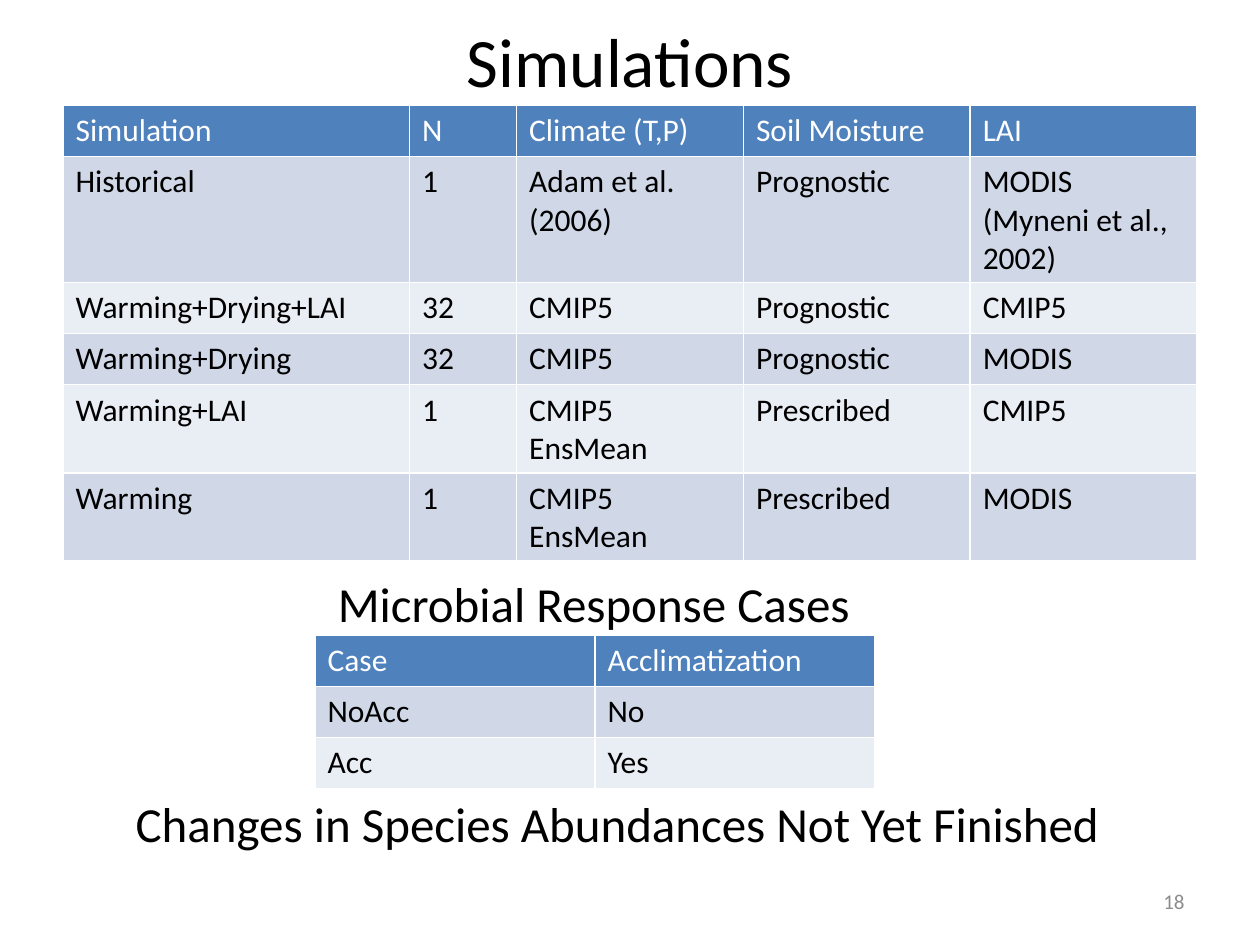
import pptx
import pptx.dml.color
import pptx.enum.text
import pptx.util

Pt = pptx.util.Pt
ALIGN = pptx.enum.text.PP_ALIGN
ANCHOR = pptx.enum.text.MSO_ANCHOR

FONT = "Calibri"
COLORS = {
    "ink": "000000",
    "header_ink": "FFFFFF",
    "muted": "8C8C8C",
    "header": "4F81BD",
    "odd_row": "D0D8E8",
    "even_row": "E9EDF4",
}
ROW_HEIGHT = 29.2

SIMULATIONS = [
    ("Simulation", "N", "Climate (T,P)", "Soil Moisture", "LAI"),
    ("Historical", "1", "Adam et al. (2006)", "Prognostic", "MODIS (Myneni et al., 2002)"),
    ("Warming+Drying+LAI", "32", "CMIP5", "Prognostic", "CMIP5"),
    ("Warming+Drying", "32", "CMIP5", "Prognostic", "MODIS"),
    ("Warming+LAI", "1", "CMIP5 EnsMean", "Prescribed", "CMIP5"),
    ("Warming", "1", "CMIP5 EnsMean", "Prescribed", "MODIS"),
]
RESPONSE_CASES = [
    ("Case", "Acclimatization"),
    ("NoAcc", "No"),
    ("Acc", "Yes"),
]


def rgb(name):
    return pptx.dml.color.RGBColor.from_string(COLORS[name])


def write(frame, text, size=18, color="ink", align=ALIGN.LEFT):
    paragraph = frame.paragraphs[0]
    paragraph.alignment = align
    run = paragraph.add_run()
    run.text = text
    run.font.name = FONT
    run.font.size = Pt(size)
    run.font.bold = False
    run.font.color.rgb = rgb(color)


def add_label(slide, box, text, anchor=ANCHOR.TOP, **text_format):
    frame = slide.shapes.add_textbox(*map(Pt, box)).text_frame
    frame.word_wrap = True
    frame.vertical_anchor = anchor
    write(frame, text, **text_format)


def add_banded_table(slide, left, top, column_widths, rows):
    table = slide.shapes.add_table(
        len(rows), len(column_widths), Pt(left), Pt(top),
        Pt(sum(column_widths)), Pt(ROW_HEIGHT * len(rows))).table
    for column, width in zip(table.columns, column_widths):
        column.width = Pt(width)
    for r, texts in enumerate(rows):
        table.rows[r].height = Pt(ROW_HEIGHT)
        band = "header" if r == 0 else "odd_row" if r % 2 else "even_row"
        for c, text in enumerate(texts):
            cell = table.cell(r, c)
            cell.fill.solid()
            cell.fill.fore_color.rgb = rgb(band)
            write(cell.text_frame, text, color="ink" if r else "header_ink")


def add_simulations(slide, left, top, width):
    add_label(slide, (left, top, width, 56), "Simulations",
              anchor=ANCHOR.MIDDLE, size=39.6, align=ALIGN.CENTER)
    add_banded_table(slide, left, top + 54.2, [198, 61.2] + [129.6] * 3, SIMULATIONS)


def add_response_cases(slide, left, top, width):
    add_label(slide, (left + 6, top, 351, 41), "Microbial Response Cases", size=28)
    add_banded_table(slide, left, top + 39, [width / 2] * 2, RESPONSE_CASES)


def add_closing(slide, left, top, width):
    add_label(slide, (left, top, width, 41),
              "Changes in Species Abundances Not Yet Finished", size=28)


def add_page_number(slide, left, top, width):
    add_label(slide, (left, top, width, 28.8), "18", anchor=ANCHOR.MIDDLE,
              size=12, color="muted", align=ALIGN.RIGHT)


def main():
    deck = pptx.Presentation()
    deck.slide_width, deck.slide_height = Pt(720), Pt(540)
    slide = deck.slides.add_slide(deck.slide_layouts[6])
    add_simulations(slide, 36, 6, 648)
    add_response_cases(slide, 180, 324, 320)
    add_closing(slide, 70.5, 450, 571)
    add_page_number(slide, 516, 500.5, 168)
    deck.save("out.pptx")


if __name__ == "__main__":
    main()
